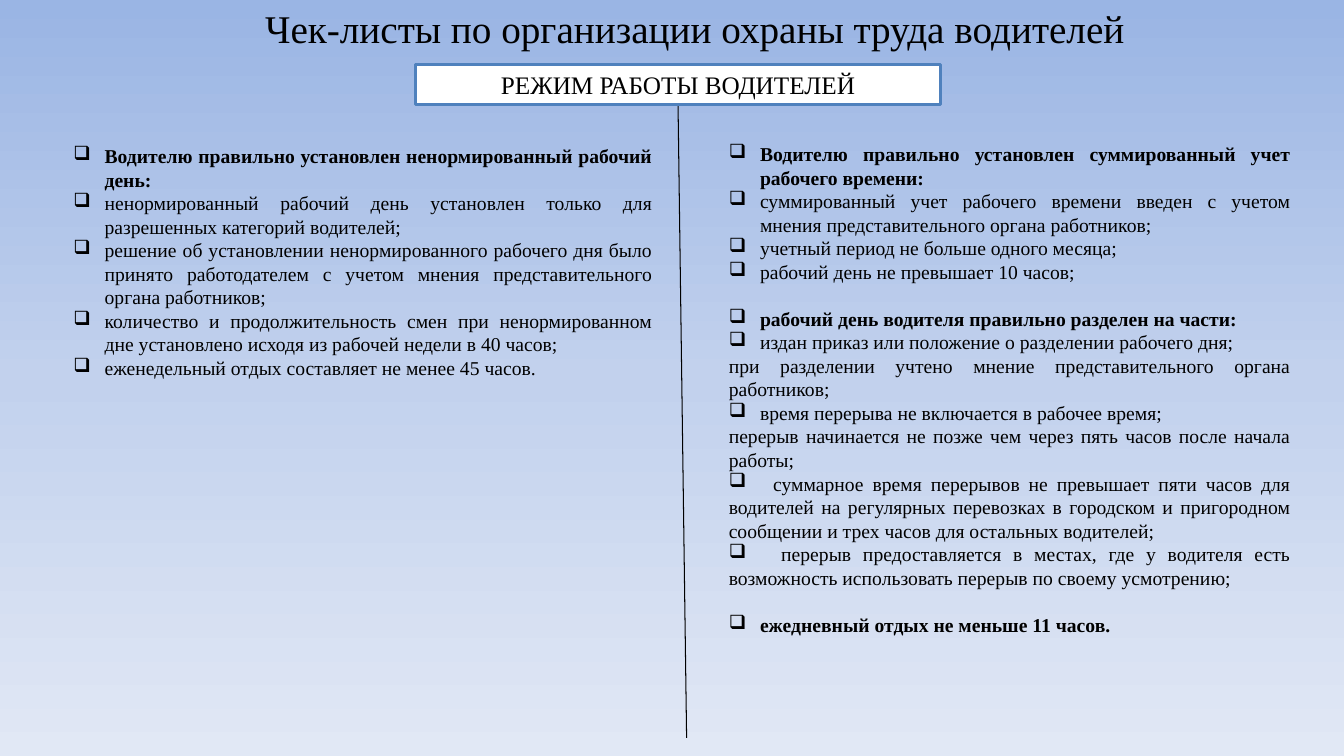
"""Build the slide with checklists on drivers' working hours."""
from copy import deepcopy

from lxml.etree import SubElement
from pptx import Presentation
from pptx.dml.color import RGBColor
from pptx.enum.shapes import MSO_CONNECTOR, MSO_SHAPE
from pptx.enum.text import MSO_ANCHOR, MSO_AUTO_SIZE, PP_ALIGN
from pptx.oxml.ns import qn
from pptx.util import Inches, Pt

COLORS = {
    "text": "000000",
    "panel": "FFFFFF",
    "border": "4F81BD",
    "sky_top": "9AB5E4",
    "sky_middle": "C2D1ED",
    "sky_bottom": "E1E8F5",
}
FONT = "Times New Roman"
HANGING = 0.31
LINE_PITCH = 16.8

IRREGULAR_DAY = [
    ("Водителю правильно установлен ненормированный рабочий день:", {"bold": True}),
    ("ненормированный рабочий день установлен только для разрешенных категорий водителей;", {}),
    ("решение об установлении ненормированного рабочего дня было принято работодателем "
     "с учетом мнения представительного органа работников;", {}),
    ("количество и продолжительность смен при ненормированном дне установлено исходя "
     "из рабочей недели в 40 часов;", {}),
    ("еженедельный отдых составляет не менее 45 часов.", {}),
]
SUMMED_HOURS = [
    ("Водителю правильно установлен суммированный учет рабочего времени:", {"bold": True}),
    ("суммированный учет рабочего времени введен с учетом мнения представительного "
     "органа работников;", {}),
    ("учетный период не больше одного месяца;", {}),
    ("рабочий день не превышает 10 часов;", {}),
    ("рабочий день водителя правильно разделен на части:", {"bold": True, "gap": True}),
    ("издан приказ или положение о разделении рабочего дня;", {}),
    ("при разделении учтено мнение представительного органа работников;", {"plain": True}),
    ("время перерыва не включается в рабочее время;", {}),
    ("перерыв начинается не позже чем через пять часов после начала работы;", {"plain": True}),
    ("суммарное время перерывов не превышает пяти часов для водителей на регулярных "
     "перевозках в городском и пригородном сообщении и трех часов для остальных "
     "водителей;", {"tab": 0.44}),
    ("перерыв предоставляется в местах, где у водителя есть возможность использовать "
     "перерыв по своему усмотрению;", {"tab": 0.52}),
    ("ежедневный отдых не меньше 11 часов.", {"bold": True, "gap": True}),
]


def color(name):
    """Return the named colour."""
    return RGBColor.from_string(COLORS[name])


def apply_format(target, values):
    """Set each attribute of the target from a dict."""
    for name, value in values.items():
        setattr(target, name, value)


def format_font(paragraph, size, bold=False):
    """Give a paragraph the slide's font."""
    apply_format(paragraph.font, {"name": FONT, "size": Pt(size), "bold": bold})
    paragraph.font.color.rgb = color("text")


def paint_background(slide):
    """Fill the background with a three-stop vertical gradient."""
    fill = slide.background.fill
    fill.gradient()
    fill.gradient_angle = 270
    stop_list = slide.element.find(".//" + qn("a:gsLst"))
    stop_list.insert(1, deepcopy(stop_list[0]))
    names = ("sky_top", "sky_middle", "sky_bottom")
    for index, (stop, name) in enumerate(zip(fill.gradient_stops, names)):
        stop.position = index / 2
        stop.color.rgb = color(name)


def write_centred(shape, text, size):
    """Write one centred line into a shape."""
    frame = shape.text_frame
    frame.text = text
    apply_format(frame, {
        "word_wrap": True,
        "auto_size": MSO_AUTO_SIZE.NONE,
        "vertical_anchor": MSO_ANCHOR.MIDDLE,
    })
    paragraph = frame.paragraphs[0]
    paragraph.alignment = PP_ALIGN.CENTER
    format_font(paragraph, size)


def set_title(slide, text):
    """Place and format the title placeholder."""
    title = slide.shapes.title
    apply_format(title, {
        "left": Inches(1.68), "top": Inches(-0.01),
        "width": Inches(10.42), "height": Inches(0.57),
    })
    write_centred(title, text, 28)


def add_divider(slide):
    """Draw the line between the two columns."""
    divider = slide.shapes.add_connector(
        MSO_CONNECTOR.STRAIGHT, Inches(6.72), Inches(0.66), Inches(6.81), Inches(7.32))
    divider.line.color.rgb = color("text")
    divider.line.width = Pt(0.75)
    SubElement(divider.element.spPr, qn("a:effectLst"))


def add_heading(slide, text):
    """Add the bordered heading panel."""
    panel = slide.shapes.add_shape(
        MSO_SHAPE.RECTANGLE, Inches(4.12), Inches(0.64), Inches(5.21), Inches(0.4))
    panel.shadow.inherit = False
    panel.fill.solid()
    panel.fill.fore_color.rgb = color("panel")
    panel.line.color.rgb = color("border")
    panel.line.width = Pt(2)
    write_centred(panel, text, 18)


def add_check_mark(paragraph, tab):
    """Give a paragraph a box bullet, hanging or followed by a tab stop."""
    properties = paragraph._p.get_or_add_pPr()
    hanging = 0 if tab else Inches(HANGING)
    properties.set("marL", str(hanging))
    properties.set("indent", str(-hanging))
    SubElement(properties, qn("a:buChar"), char="❑")
    if tab:
        tab_list = SubElement(properties, qn("a:tabLst"))
        SubElement(tab_list, qn("a:tab"), pos=str(Inches(tab)), algn="l")


def add_checklist(slide, left, top, width, height, items):
    """Add one column of checklist items."""
    box = slide.shapes.add_textbox(
        Inches(left), Inches(top), Inches(width), Inches(height))
    frame = box.text_frame
    frame.word_wrap = True
    for index, (text, options) in enumerate(items):
        paragraph = frame.add_paragraph() if index else frame.paragraphs[0]
        tab = options.get("tab")
        paragraph.add_run().text = "\t" + text if tab else text
        if not options.get("plain"):
            add_check_mark(paragraph, tab)
        apply_format(paragraph, {
            "alignment": PP_ALIGN.JUSTIFY,
            "line_spacing": Pt(LINE_PITCH),
            "space_before": Pt(LINE_PITCH if options.get("gap") else 0),
        })
        format_font(paragraph, 14, options.get("bold", False))


def main():
    """Build and save the presentation."""
    presentation = Presentation()
    presentation.slide_width = Inches(13.33)
    presentation.slide_height = Inches(7.5)
    slide = presentation.slides.add_slide(presentation.slide_layouts[5])
    paint_background(slide)
    set_title(slide, "Чек-листы по организации охраны труда водителей")
    add_divider(slide)
    add_heading(slide, "РЕЖИМ РАБОТЫ ВОДИТЕЛЕЙ")
    add_checklist(slide, 0.63, 1.38, 5.94, 2.46, IRREGULAR_DAY)
    add_checklist(slide, 7.13, 1.36, 5.77, 5.76, SUMMED_HOURS)
    presentation.save("out.pptx")


if __name__ == "__main__":
    main()
